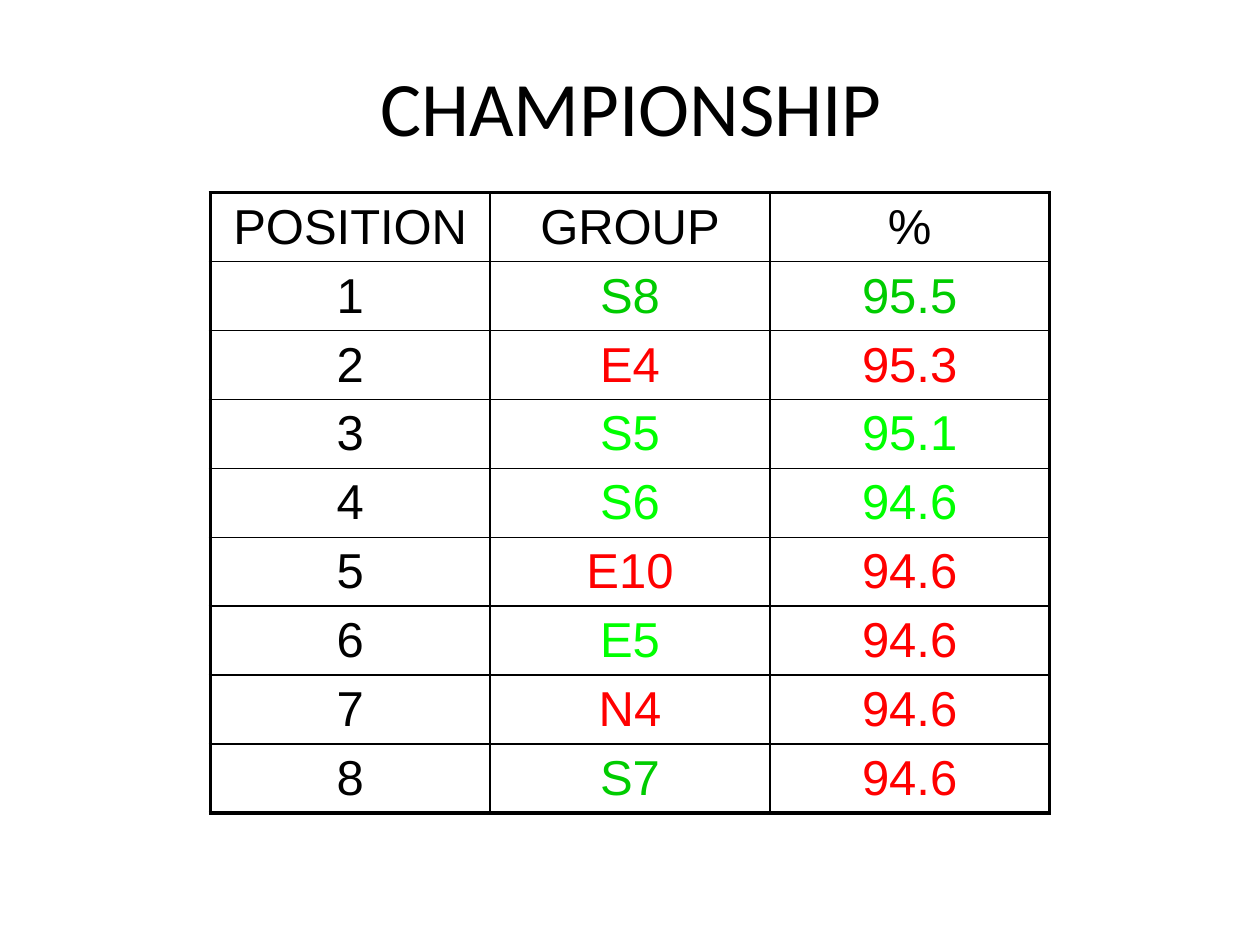
"""Build the championship ranking slide."""
from lxml import etree
from pptx import Presentation
from pptx import util as u
from pptx.dml.color import RGBColor
from pptx.enum import text
from pptx.oxml import ns

BLACK = RGBColor(0x00, 0x00, 0x00)
WHITE = RGBColor(0xFF, 0xFF, 0xFF)
RED = RGBColor(0xFF, 0x00, 0x00)
GREEN = RGBColor(0x00, 0xCC, 0x00)
LIME = RGBColor(0x00, 0xFF, 0x00)
THIN, THICK = 1, 2.25
ROW_HEIGHT = u.Inches(0.53)
COLUMN_WIDTH = u.Inches(2.22)
HEADINGS = ("POSITION", "GROUP", "%")
RANKING = [
    ("S8", GREEN, "95.5", GREEN),
    ("E4", RED, "95.3", RED),
    ("S5", LIME, "95.1", LIME),
    ("S6", LIME, "94.6", LIME),
    ("E10", RED, "94.6", RED),
    ("E5", LIME, "94.6", RED),
    ("N4", RED, "94.6", RED),
    ("S7", GREEN, "94.6", RED),
]


def write(frame, words, font, size, color):
    frame.text = words
    frame.vertical_anchor = text.MSO_ANCHOR.MIDDLE
    para = frame.paragraphs[0]
    para.alignment = text.PP_ALIGN.CENTER
    span = para.runs[0]
    span.font.name = font
    span.font.size = u.Pt(size)
    span.font.color.rgb = color


def add_border(cell, side, width):
    line = etree.SubElement(cell._tc.get_or_add_tcPr(), ns.qn(f"a:ln{side}"), w=str(u.Pt(width)))
    fill = etree.SubElement(line, ns.qn("a:solidFill"))
    etree.SubElement(fill, ns.qn("a:srgbClr"), val=str(BLACK))


deck = Presentation()
deck.slide_width = u.Inches(10)
deck.slide_height = u.Inches(7.5)
page = deck.slides.add_slide(deck.slide_layouts[6])
page.background.fill.solid()
page.background.fill.fore_color.rgb = WHITE

title = page.shapes.add_textbox(u.Inches(0.51), u.Inches(0.21), u.Inches(9), u.Inches(1.25))
title.text_frame.word_wrap = True
write(title.text_frame, "CHAMPIONSHIP", "Calibri", 44, BLACK)

rows = [[(heading, BLACK) for heading in HEADINGS]]
for position, (group, group_color, score, score_color) in enumerate(RANKING, 1):
    rows.append([(str(position), BLACK), (group, group_color), (score, score_color)])

last_row, last_column = len(rows) - 1, len(HEADINGS) - 1
table = page.shapes.add_table(
    len(rows), len(HEADINGS), u.Inches(1.67), u.Inches(1.53),
    COLUMN_WIDTH * len(HEADINGS), ROW_HEIGHT * len(rows),
).table
table.first_row = False
table.horz_banding = False
for column in table.columns:
    column.width = COLUMN_WIDTH
for row in table.rows:
    row.height = ROW_HEIGHT

for r, entries in enumerate(rows):
    for c, (words, color) in enumerate(entries):
        cell = table.cell(r, c)
        cell.margin_top = cell.margin_bottom = u.Inches(0.04)
        write(cell.text_frame, words, "Arial", 28, color)
        cell.vertical_anchor = text.MSO_ANCHOR.MIDDLE
        outer_sides = {"L": c == 0, "R": c == last_column, "T": r == 0, "B": r == last_row}
        for side, is_outer in outer_sides.items():
            add_border(cell, side, THICK if is_outer else THIN)
        cell.fill.background()

deck.save("out.pptx")
